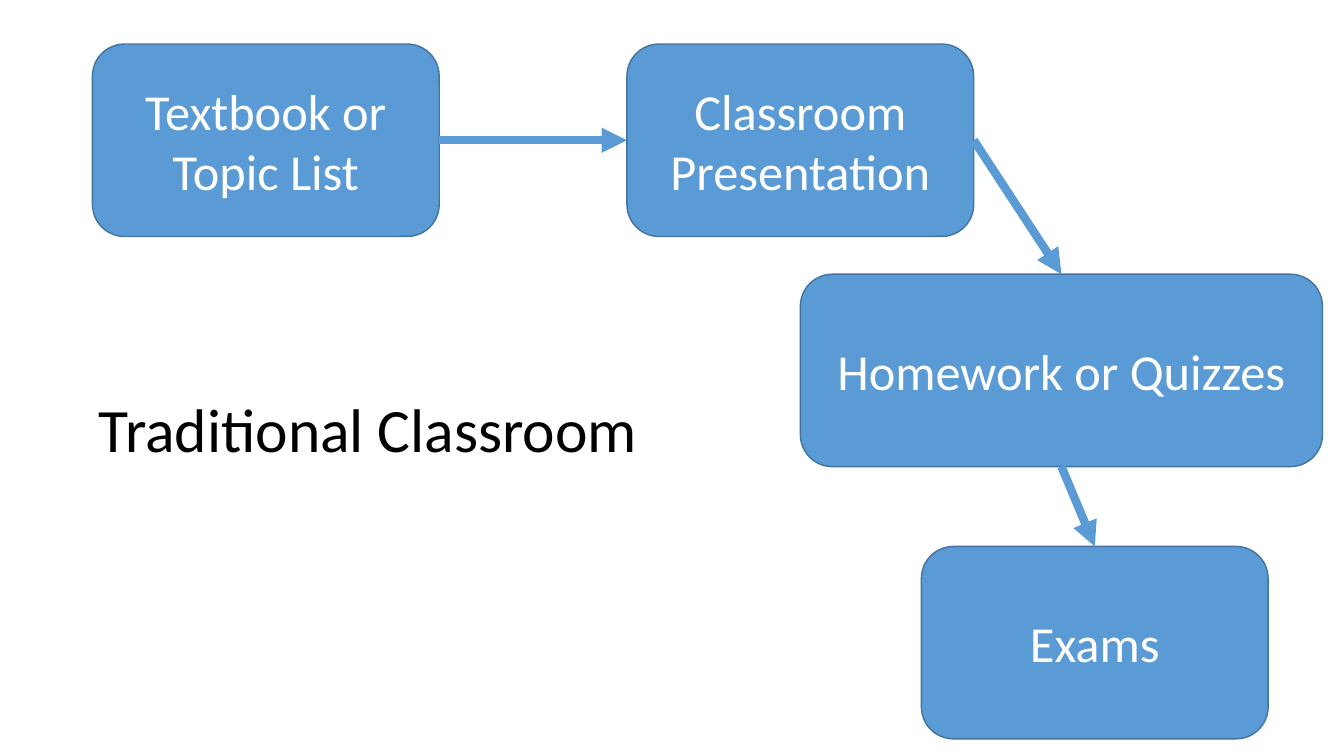
import dataclasses

import pptx
import pptx.dml.color
import pptx.enum.dml
import pptx.enum.shapes
import pptx.enum.text
import pptx.oxml.ns
import pptx.util
from lxml import etree
from pptx.util import Cm, Pt


@dataclasses.dataclass(frozen=True)
class Theme:
    font: str = "Calibri"
    title_size: int = 44
    step_size: int = 36
    title_color: str = "000000"
    step_color: str = "FFFFFF"
    fill: str = "5B9BD5"
    outline: str = "43739E"


theme = Theme()


def rgb(value):
    return pptx.dml.color.RGBColor.from_string(value)


def write(shape, text, size, color, alignment):
    """Put one styled run, vertically centred, into the shape."""
    frame = shape.text_frame
    frame.word_wrap = True
    frame.auto_size = pptx.enum.text.MSO_AUTO_SIZE.NONE
    frame.vertical_anchor = pptx.enum.text.MSO_ANCHOR.MIDDLE
    para = frame.paragraphs[0]
    para.alignment = alignment
    span = para.add_run()
    span.text = text
    span.font.name = theme.font
    span.font.size = Pt(size)
    span.font.color.rgb = rgb(color)
    return para


deck = pptx.Presentation()
deck.slide_width, deck.slide_height = Cm(33.87), Cm(19.05)
page = deck.slides.add_slide(deck.slide_layouts[5])

title = page.shapes.title
title.left, title.top = Cm(2.24), Cm(9.07)
title.width, title.height = Cm(29.21), Cm(3.68)
title_para = write(title, "Traditional Classroom", theme.title_size,
                   theme.title_color, pptx.enum.text.PP_ALIGN.LEFT)
title_para.line_spacing = 0.9

# Steps in teaching order: text, left, top, width in centimetres
steps = [
    ("Textbook or Topic List", 2.33, 1.11, 8.74),
    ("Classroom Presentation", 15.8, 1.11, 8.74),
    ("Homework or Quizzes", 20.17, 6.91, 13.16),
    ("Exams", 23.22, 13.77, 8.74),
]
step_height = Cm(4.85)
boxes = []
for text, left, top, width in steps:
    box = page.shapes.add_shape(
        pptx.enum.shapes.MSO_SHAPE.ROUNDED_RECTANGLE,
        Cm(left), Cm(top), Cm(width), step_height)
    box.shadow.inherit = False
    box.fill.solid()
    box.fill.fore_color.rgb = rgb(theme.fill)
    box.line.color.rgb = rgb(theme.outline)
    box.line.width = Pt(1)
    write(box, text, theme.step_size, theme.step_color,
          pptx.enum.text.PP_ALIGN.CENTER)
    boxes.append(box)

# Connection sites of a rounded rectangle
TOP, LEFT, BOTTOM, RIGHT = range(4)
sites = [(RIGHT, LEFT), (RIGHT, TOP), (BOTTOM, TOP)]
for source, target, (start, end) in zip(boxes, boxes[1:], sites):
    arrow = page.shapes.add_connector(
        pptx.enum.shapes.MSO_CONNECTOR.STRAIGHT, 0, 0, 0, 0)
    arrow.begin_connect(source, start)
    arrow.end_connect(target, end)
    arrow.line.color.rgb = rgb(theme.fill)
    arrow.line.width = Pt(6)
    etree.SubElement(arrow.line._get_or_add_ln(),
                     pptx.oxml.ns.qn("a:tailEnd"), type="triangle")
    etree.SubElement(arrow._element.spPr, pptx.oxml.ns.qn("a:effectLst"))

deck.save("out.pptx")
